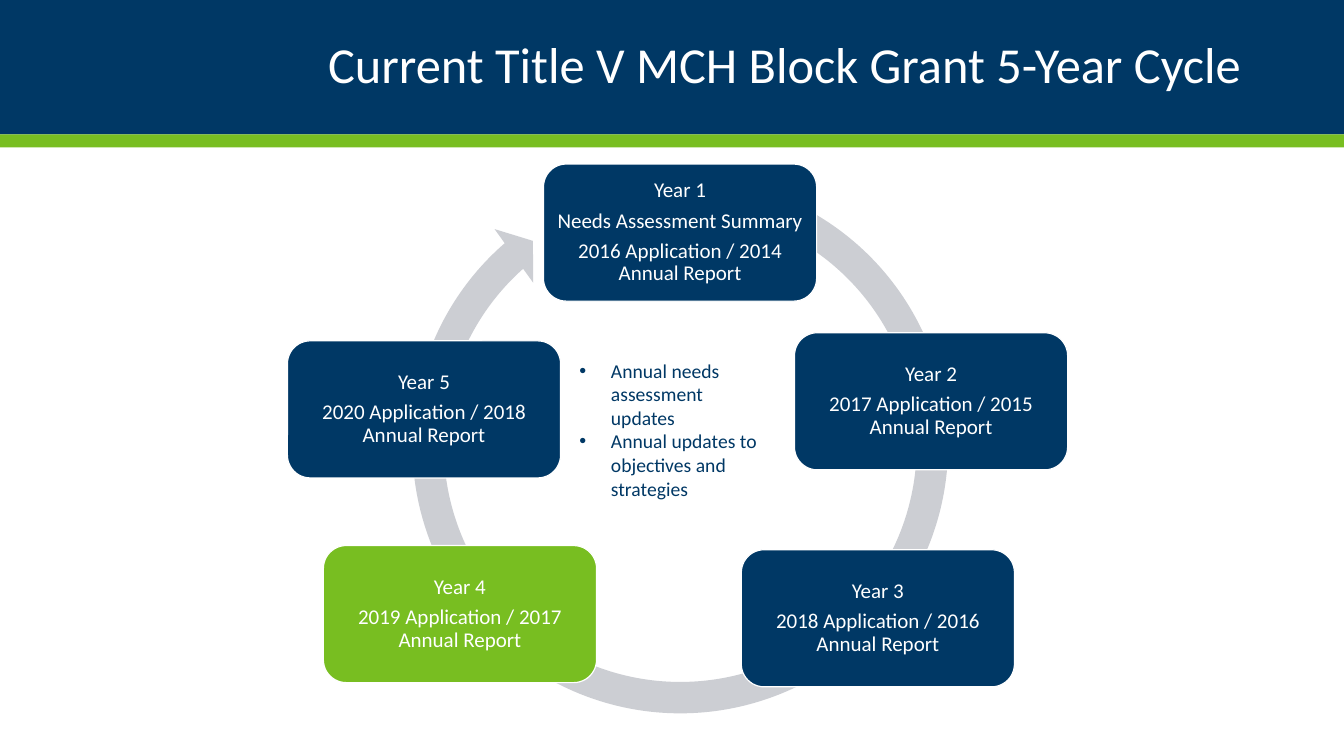
"""Build the slide on the five-year block grant cycle."""
from dataclasses import dataclass

from lxml import etree
from pptx import Presentation
from pptx import util as u
from pptx.dml.color import RGBColor
from pptx.enum import shapes, text
from pptx.oxml import ns

COLORS = {"navy": "003865", "green": "78BE21", "gray": "CCCED3", "white": "FFFFFF"}
FONT = "Calibri"
NODE_W, NODE_H = 195.1, 97.9
MID = text.MSO_ANCHOR.MIDDLE
TITLE_PARA = {"alignment": text.PP_ALIGN.RIGHT, "line_spacing": 0.9}
NODE_PARA = {"alignment": text.PP_ALIGN.CENTER, "line_spacing": 0.9,
             "space_after": u.Pt(5.25)}
NODE_FRAME = {"vertical_anchor": MID, **{
    f"margin_{side}": u.Pt(4.2) for side in ("left", "right", "top", "bottom")}}


@dataclass
class Year:
    number: int
    x: float
    y: float
    color: str = "navy"
    extra: tuple[str, ...] = ()

    def lines(self) -> list[str]:
        report = f"{2015 + self.number} Application / {2013 + self.number} Annual Report"
        return [f"Year {self.number}", *self.extra, report]


YEARS = [
    Year(1, 388.2, 117.2, extra=("Needs Assessment Summary",)),
    Year(2, 567.5, 237.7),
    Year(3, 529.5, 392.7),
    Year(4, 231, 389.7, "green"),
    Year(5, 205.3, 243.5),
]


def rgb(name: str) -> RGBColor:
    return RGBColor.from_string(COLORS[name])


def set_all(target, values: dict) -> None:
    for key, value in values.items():
        setattr(target, key, value)


def add_shape(s, kind, x: float, y: float, w: float, h: float, color: str):
    sp = s.shapes.add_shape(kind, *map(u.Pt, (x, y, w, h)))
    sp.shadow.inherit = False
    sp.fill.solid()
    sp.fill.fore_color.rgb = rgb(color)
    sp.line.fill.background()
    return sp


def add_box(s, x: float, y: float, w: float, h: float):
    return s.shapes.add_textbox(*map(u.Pt, (x, y, w, h)))


def write(sp, lines: list[str], size: float, color: str,
          frame: dict, para: dict) -> None:
    tf = sp.text_frame
    set_all(tf, {"word_wrap": True, **frame})
    for i, line in enumerate(lines):
        p = tf.add_paragraph() if i else tf.paragraphs[0]
        set_all(p, para)
        r = p.add_run()
        r.text = line
        set_all(r.font, {"size": u.Pt(size), "name": FONT})
        r.font.color.rgb = rgb(color)


def add_bullets(sp, indent: float) -> None:
    for p in sp.text_frame.paragraphs:
        pPr = p._p.get_or_add_pPr()
        pPr.set("marL", str(u.Pt(indent)))
        pPr.set("indent", str(-u.Pt(indent)))
        etree.SubElement(pPr, ns.qn("a:buFont"), typeface="Arial")
        etree.SubElement(pPr, ns.qn("a:buChar"), char="•")


def add_year(s, year: Year) -> None:
    sp = add_shape(s, shapes.MSO_SHAPE.ROUNDED_RECTANGLE,
                   year.x, year.y, NODE_W, NODE_H, year.color)
    sp.line.color.rgb = rgb("white")
    sp.line.width = u.Pt(0.85)
    write(sp, year.lines(), 15, "white", NODE_FRAME, NODE_PARA)


def main() -> None:
    prs = Presentation()
    prs.slide_width, prs.slide_height = u.Pt(960), u.Pt(540)
    s = prs.slides.add_slide(prs.slide_layouts[6])

    add_shape(s, shapes.MSO_SHAPE.RECTANGLE, 0, 0, 960, 96, "navy")
    add_shape(s, shapes.MSO_SHAPE.RECTANGLE, 0, 96, 960, 9.2, "green")
    title = add_box(s, 66, 12, 828, 72)
    write(title, ["Current Title V MCH Block Grant 5-Year Cycle"], 36, "white",
          {"vertical_anchor": MID}, TITLE_PARA)

    ring = add_shape(s, shapes.MSO_SHAPE.CIRCULAR_ARROW,
                     282.2, 114.5, 407.5, 407.5, "gray")
    for i, value in enumerate((0.055, 3.307, 137.236, 174.179, 0.058)):
        ring.adjustments[i] = value
    for year in YEARS:
        add_year(s, year)

    notes = add_box(s, 406.8, 252.7, 150.5, 108.7)
    write(notes, ["Annual needs assessment updates",
                  "Annual updates to objectives and strategies"], 14, "navy", {}, {})
    add_bullets(notes, 22.5)
    prs.save("out.pptx")


if __name__ == "__main__":
    main()
